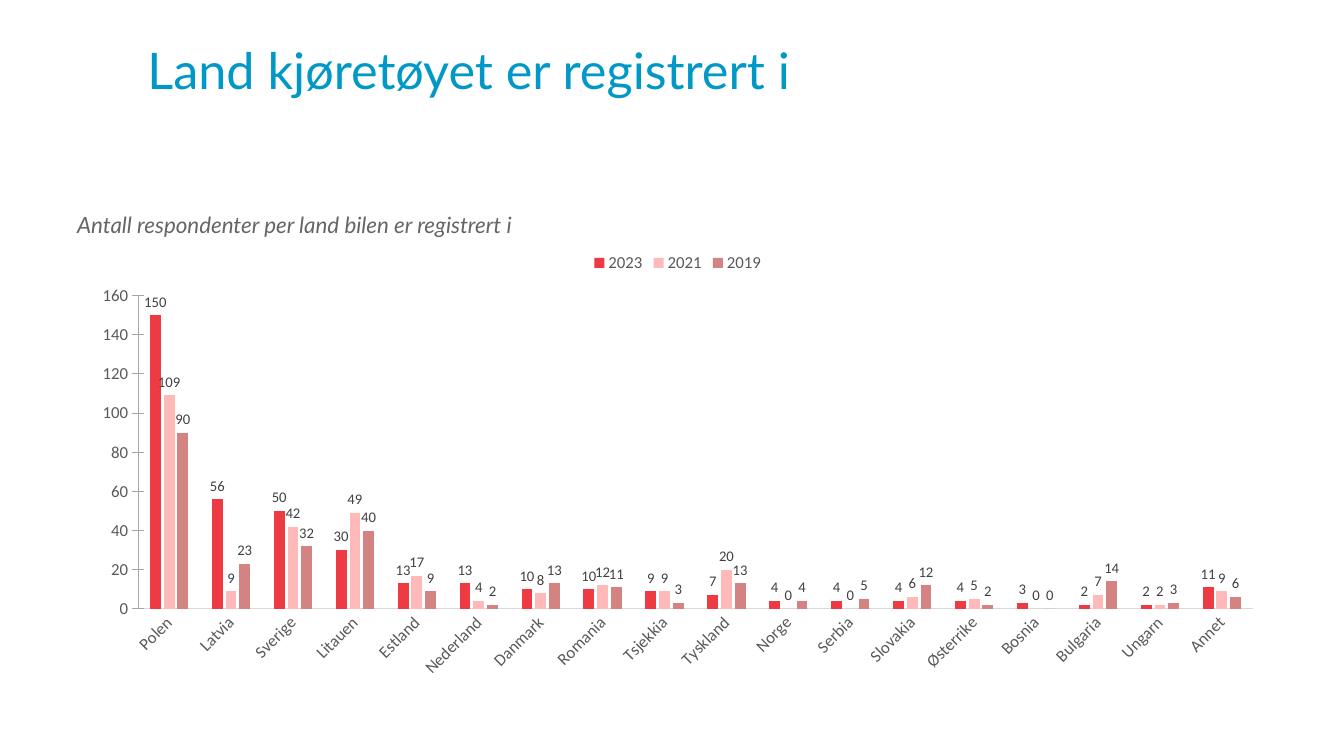
from pptx import Presentation
from pptx.chart.data import CategoryChartData
from pptx.dml.color import RGBColor
from pptx.enum.chart import XL_CHART_TYPE, XL_LABEL_POSITION, XL_LEGEND_POSITION, XL_TICK_MARK
from pptx.enum.text import MSO_ANCHOR
from pptx.util import Pt

COLUMNS = XL_CHART_TYPE.COLUMN_CLUSTERED
OUTSIDE_END = XL_LABEL_POSITION.OUTSIDE_END
TOP = XL_LEGEND_POSITION.TOP
NO_TICK, CROSS_TICK = XL_TICK_MARK.NONE, XL_TICK_MARK.CROSS
MIDDLE, BOTTOM = MSO_ANCHOR.MIDDLE, MSO_ANCHOR.BOTTOM

PX = 9525
SLIDE_SIZE = (1280, 720)
COLORS = {
    "title": "0098C6", "subtitle": "656567", "black": "000000",
    "axis text": "595959", "label": "404040",
    "category line": "D9D9D9", "value line": "A6A6A6",
    "2023": "EE3A43", "2021": "FFB9B9", "2019": "D38381",
}
TEXTS = [
    ("Land kjøretøyet er registrert i", (131, 6, 1085, 120), MIDDLE, 36, "title", False),
    ("Antall respondenter per land bilen er registrert i", (64, 171, 1170, 60), BOTTOM, 16, "subtitle", True),
]
CHART_BOX = (75, 230, 1141, 424)
YEARS = ("2023", "2021", "2019")
COUNTS = {
    "Polen": (150, 109, 90),
    "Latvia": (56, 9, 23),
    "Sverige": (50, 42, 32),
    "Litauen": (30, 49, 40),
    "Estland": (13, 17, 9),
    "Nederland": (13, 4, 2),
    "Danmark": (10, 8, 13),
    "Romania": (10, 12, 11),
    "Tsjekkia": (9, 9, 3),
    "Tyskland": (7, 20, 13),
    "Norge": (4, 0, 4),
    "Serbia": (4, 0, 5),
    "Slovakia": (4, 6, 12),
    "Østerrike": (4, 5, 2),
    "Bosnia": (3, 0, 0),
    "Bulgaria": (2, 7, 14),
    "Ungarn": (2, 2, 3),
    "Annet": (11, 9, 6),
}


def emu(box):
    return [length * PX for length in box]


def color(name):
    return RGBColor.from_string(COLORS[name])


def set_font(font, size, color_name, name="Calibri", italic=False):
    font.name = name
    font.size = Pt(size)
    font.italic = italic
    font.bold = False
    font.color.rgb = color(color_name)


def add_text(slide, text, box, anchor, size, color_name, italic):
    frame = slide.shapes.add_textbox(*emu(box)).text_frame
    frame.word_wrap = True
    frame.vertical_anchor = anchor
    paragraph = frame.paragraphs[0]
    paragraph.text = text
    set_font(paragraph.font, size, color_name, "Lato", italic)


def style_axis(axis, tick, line_color):
    axis.has_major_gridlines = False
    axis.major_tick_mark = tick
    axis.minor_tick_mark = NO_TICK
    axis.format.line.color.rgb = color(line_color)
    axis.format.line.width = Pt(0.75)
    set_font(axis.tick_labels.font, 12, "axis text")


def add_counts_chart(slide):
    data = CategoryChartData()
    data.categories = list(COUNTS)
    for year, values in zip(YEARS, zip(*COUNTS.values())):
        data.add_series(year, values)
    chart = slide.shapes.add_chart(COLUMNS, *emu(CHART_BOX), data).chart
    set_font(chart.font, 10, "black")
    chart.has_title = False
    chart.has_legend = True
    chart.legend.position = TOP
    chart.legend.include_in_layout = False
    set_font(chart.legend.font, 12, "axis text")

    style_axis(chart.category_axis, NO_TICK, "category line")
    style_axis(chart.value_axis, CROSS_TICK, "value line")
    chart.category_axis._element.txPr.bodyPr.set("rot", "-2700000")
    chart.value_axis.minimum_scale = 0
    chart.value_axis.maximum_scale = 160
    chart.value_axis.major_unit = 20

    plot = chart.plots[0]
    plot.vary_by_categories = False
    plot.gap_width = 219
    plot.overlap = -27
    for series in plot.series:
        series.format.fill.solid()
        series.format.fill.fore_color.rgb = color(series.name)
        labels = series.data_labels
        labels.show_value = True
        labels.position = OUTSIDE_END
        set_font(labels.font, 10.5, "label")


def main():
    presentation = Presentation()
    presentation.slide_width, presentation.slide_height = emu(SLIDE_SIZE)
    slide = presentation.slides.add_slide(presentation.slide_layouts[6])
    for text in TEXTS:
        add_text(slide, *text)
    add_counts_chart(slide)
    presentation.save("out.pptx")


if __name__ == "__main__":
    main()
